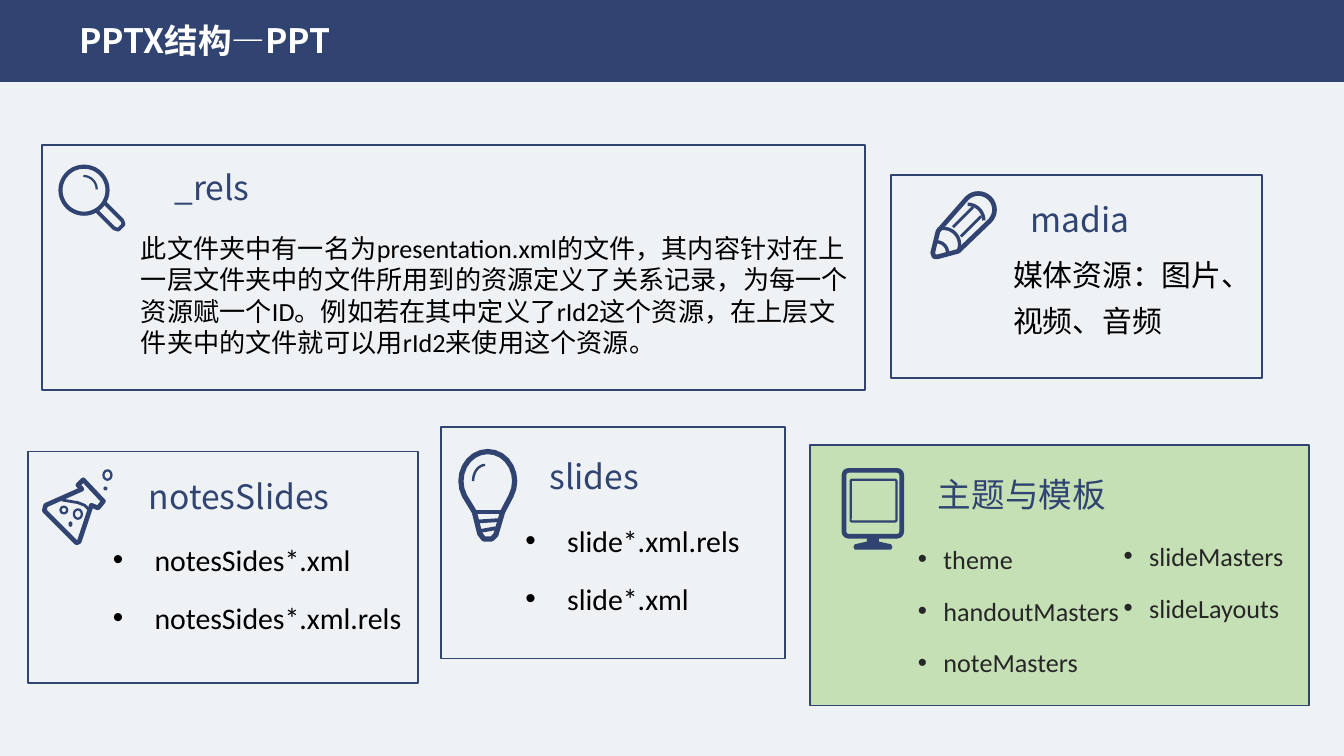
import math

import lxml.etree
import pptx
import pptx.dml.color
import pptx.enum.shapes
import pptx.enum.text
import pptx.oxml.ns
import pptx.util

Inches = pptx.util.Inches
Pt = pptx.util.Pt
RGBColor = pptx.dml.color.RGBColor
MSO_SHAPE = pptx.enum.shapes.MSO_SHAPE
qn = pptx.oxml.ns.qn

NAVY = RGBColor(0x30, 0x43, 0x71)
GREEN = RGBColor(0xC5, 0xE0, 0xB4)
PALE = RGBColor(0xEE, 0xF2, 0xF5)
WHITE = RGBColor(0xFF, 0xFF, 0xFF)
BLACK = RGBColor(0, 0, 0)
DARK = RGBColor(0x26, 0x26, 0x26)
CJK = "Noto Sans CJK SC"

TITLE = {"size": Pt(18), "name": CJK, "bold": True}
HEADING = {"size": Pt(18), "name": CJK, "bold": False}
BODY_16 = {"size": Pt(16), "name": "Calibri", "bold": False}
BODY_14 = {"size": Pt(14), "name": "Calibri", "bold": False}
SPACED = {"line_spacing": 1.3, "space_before": Pt(6)}
TIGHT = {"line_spacing": 1.0, "space_before": Pt(0)}

# left, top, width, height, fill
BOXES = [
    (0.31, 1.08, 6.13, 1.82, None),
    (6.63, 1.3, 2.76, 1.51, None),
    (0.21, 3.36, 2.9, 1.72, None),
    (3.28, 3.18, 2.56, 1.72, None),
    (6.03, 3.31, 3.71, 1.94, GREEN),
]
HEADINGS = [
    ("_rels", 1.2, 1.19, 1.47),
    ("madia", 7.57, 1.43, 1.47),
    ("notesSlides", 1.01, 3.49, 1.91),
    ("slides", 3.99, 3.34, 1.51),
    ("主题与模板", 6.88, 3.48, 2.69),
]
# placeholder index, place, items, font, colour, indent
LISTS = [
    (1, (0.74, 3.9, 2.37, 0.88), ["notesSides*.xml", "notesSides*.xml.rels"], BODY_16, BLACK, 0.31),
    (2, (3.81, 3.76, 1.99, 0.88), ["slide*.xml.rels", "slide*.xml"], BODY_16, BLACK, 0.31),
    (3, (6.73, 3.92, 1.74, 1.19), ["theme", "handoutMasters", "noteMasters"], BODY_14, DARK, 0.19),
    (4, (8.26, 3.9, 1.52, 0.82), ["slideMasters", "slideLayouts"], BODY_14, DARK, 0.19),
]
RELS_TEXT = (
    "此文件夹中有一名为presentation.xml的文件，其内容针对在上一层文件夹中的文件所用到的资源"
    "定义了关系记录，为每一个资源赋一个ID。例如若在其中定义了rId2这个资源，"
    "在上层文件夹中的文件就可以用rId2来使用这个资源。"
)


def set_attrs(obj, values):
    for name, value in values.items():
        setattr(obj, name, value)


def place(sp, at):
    set_attrs(sp, dict(zip(("left", "top", "width", "height"), map(Inches, at))))


def style(sp, fill=None, line=None, width=1):
    sp.shadow.inherit = False
    if fill is None:
        sp.fill.background()
    else:
        sp.fill.solid()
        sp.fill.fore_color.rgb = fill
    if line is None:
        sp.line.fill.background()
    else:
        sp.line.color.rgb = line
        sp.line.width = Pt(width)


def add_shape(slide, kind, at, **look):
    sp = slide.shapes.add_shape(kind, *map(Inches, at))
    style(sp, **look)
    return sp


def add_path(slide, points, closed=False, **look):
    start, *rest = [tuple(map(Inches, point)) for point in points]
    builder = slide.shapes.build_freeform(*start, scale=1.0)
    builder.add_line_segments(rest, close=closed)
    style(builder.convert_to_shape(), **look)


def arc(cx, cy, rx, ry, start, end, steps=16):
    """Points on an ellipse; angles in degrees, clockwise from the right."""
    angles = [math.radians(start + (end - start) * i / steps) for i in range(steps + 1)]
    return [(cx + rx * math.cos(a), cy + ry * math.sin(a)) for a in angles]


def write(sp, lines, font, color, spacing=TIGHT, indent=0):
    """Fill a text shape with one paragraph per line, bulleted if indented."""
    tf = sp.text_frame
    set_attrs(tf, {
        "word_wrap": True,
        "vertical_anchor": pptx.enum.text.MSO_ANCHOR.TOP,
        "auto_size": pptx.enum.text.MSO_AUTO_SIZE.SHAPE_TO_FIT_TEXT,
    })
    for i, line in enumerate(lines):
        p = tf.add_paragraph() if i else tf.paragraphs[0]
        p.alignment = pptx.enum.text.PP_ALIGN.LEFT
        set_attrs(p, spacing)
        r = p.add_run()
        r.text = line
        set_attrs(r.font, font)
        r.font.color.rgb = color
        lxml.etree.SubElement(r._r.get_or_add_rPr(), qn("a:ea"), typeface=CJK)
        if indent:
            pPr = p._p.get_or_add_pPr()
            pPr.set("marL", str(Inches(indent)))
            pPr.set("indent", str(-Inches(indent)))
            lxml.etree.SubElement(pPr, qn("a:buFont"), typeface="Arial")
            lxml.etree.SubElement(pPr, qn("a:buChar"), char="•")


def add_text(slide, at, text, font, color, spacing=TIGHT):
    write(slide.shapes.add_textbox(*map(Inches, at)), [text], font, color, spacing)


def fill_placeholder(slide, sp, at, *text):
    """Place and fill a placeholder, and bring it in front of the boxes."""
    place(sp, at)
    write(sp, *text)
    slide.shapes._spTree.append(sp._element)


def draw_magnifier(slide):
    add_shape(slide, MSO_SHAPE.OVAL, (0.45, 1.24, 0.35, 0.35), line=NAVY, width=2.2)
    add_path(slide, arc(0.62, 1.41, 0.1, 0.1, -90, 0), line=NAVY, width=1.2)
    handle = [(0.72, 1.57), (0.85, 1.7), (0.88, 1.71), (0.92, 1.67), (0.91, 1.64), (0.78, 1.51)]
    add_path(slide, handle, line=NAVY, width=2)


def draw_pencil(slide):
    outline = [(6.94, 1.88), (6.98, 1.72), *arc(7.28, 1.56, 0.12, 0.12, -135, 45),
               (7.13, 1.87), (6.98, 1.91), (6.95, 1.91)]
    add_path(slide, outline, closed=True, line=NAVY, width=2.5)
    for x, y, radius, start, end in [(7.2, 1.64, 0.12, -90, 0), (7.02, 1.82, 0.12, -110, 20),
                                     (6.97, 1.88, 0.08, -90, 0)]:
        add_path(slide, arc(x, y, radius, radius, start, end), line=NAVY, width=1.8)
    for x, y in [(7.09, 1.69), (7.15, 1.76)]:
        add_path(slide, [(x, y), (x + 0.15, y - 0.15)], line=NAVY, width=1.5)


def draw_flask(slide):
    outline = [(0.62, 3.57), (0.77, 3.73), (0.73, 3.78), (0.68, 3.76), (0.59, 4.03), (0.57, 4.04),
               (0.33, 3.8), (0.34, 3.76), (0.61, 3.64), (0.58, 3.61)]
    add_path(slide, outline, closed=True, line=NAVY, width=2.5)
    add_path(slide, [(0.46, 3.72), (0.58, 3.74), (0.63, 3.76), (0.67, 3.8)], line=NAVY, width=1.5)
    for at in [(0.55, 3.79, 0.06, 0.07), (0.77, 3.5, 0.06, 0.07), (0.45, 3.77, 0.05, 0.05)]:
        add_shape(slide, MSO_SHAPE.OVAL, at, line=NAVY, width=1.2)
    for at in [(0.51, 3.88, 0.03, 0.04), (0.77, 3.62, 0.03, 0.03)]:
        add_shape(slide, MSO_SHAPE.OVAL, at, fill=NAVY)


def draw_bulb(slide):
    outline = [*arc(3.63, 3.58, 0.2, 0.22, 150, 390), (3.74, 3.81), (3.69, 3.98), (3.66, 4.01),
               (3.6, 4.01), (3.57, 3.97), (3.53, 3.81)]
    add_path(slide, outline, closed=True, line=NAVY, width=2.8)
    for rib in [((3.53, 3.81), (3.73, 3.81)), ((3.56, 3.88), (3.71, 3.87)),
                ((3.58, 3.95), (3.69, 3.93))]:
        add_path(slide, rib, line=NAVY, width=2)
    add_path(slide, arc(3.61, 3.58, 0.09, 0.12, 180, 270), line=NAVY, width=1.3)


def draw_monitor(slide):
    for at, width, corner in [((6.28, 3.5, 0.43, 0.49), 2.5, 0.08),
                              ((6.33, 3.57, 0.34, 0.31), 1.2, 0.03)]:
        sp = add_shape(slide, MSO_SHAPE.ROUNDED_RECTANGLE, at, line=NAVY, width=width)
        sp.adjustments[0] = corner
    stand = [(6.45, 4.0), (6.54, 4.0), (6.54, 4.03), (6.63, 4.05), (6.64, 4.07), (6.63, 4.09),
             (6.36, 4.09), (6.35, 4.07), (6.36, 4.05), (6.45, 4.03)]
    add_path(slide, stand, closed=True, fill=NAVY)


def main():
    prs = pptx.Presentation()
    prs.slide_width, prs.slide_height = Inches(10), Inches(10 * 9 / 16)
    slide = prs.slides.add_slide(prs.slide_layouts.get_by_name("Comparison"))
    slide.background.fill.solid()
    slide.background.fill.fore_color.rgb = PALE

    add_shape(slide, MSO_SHAPE.RECTANGLE, (0, 0, 10, 0.61), fill=NAVY)
    for *at, fill in BOXES:
        add_shape(slide, MSO_SHAPE.RECTANGLE, at, fill=fill, line=NAVY)
    fill_placeholder(slide, slide.shapes.title, (0.49, 0.1, 2.92, 0.4), ["PPTX结构—PPT"], TITLE, WHITE)
    for text, left, top, width in HEADINGS:
        add_text(slide, (left, top, width, 0.4), text, HEADING, NAVY)
    add_text(slide, (0.95, 1.68, 5.48, 1.04), RELS_TEXT, BODY_14, BLACK)
    add_text(slide, (7.44, 1.78, 1.82, 0.8), "媒体资源：图片、视频、音频", BODY_16, BLACK, SPACED)
    for idx, at, items, font, color, indent in LISTS:
        fill_placeholder(slide, slide.placeholders[idx], at, items, font, color, SPACED, indent)
    for draw in (draw_magnifier, draw_pencil, draw_flask, draw_bulb, draw_monitor):
        draw(slide)
    prs.save("out.pptx")


if __name__ == "__main__":
    main()
